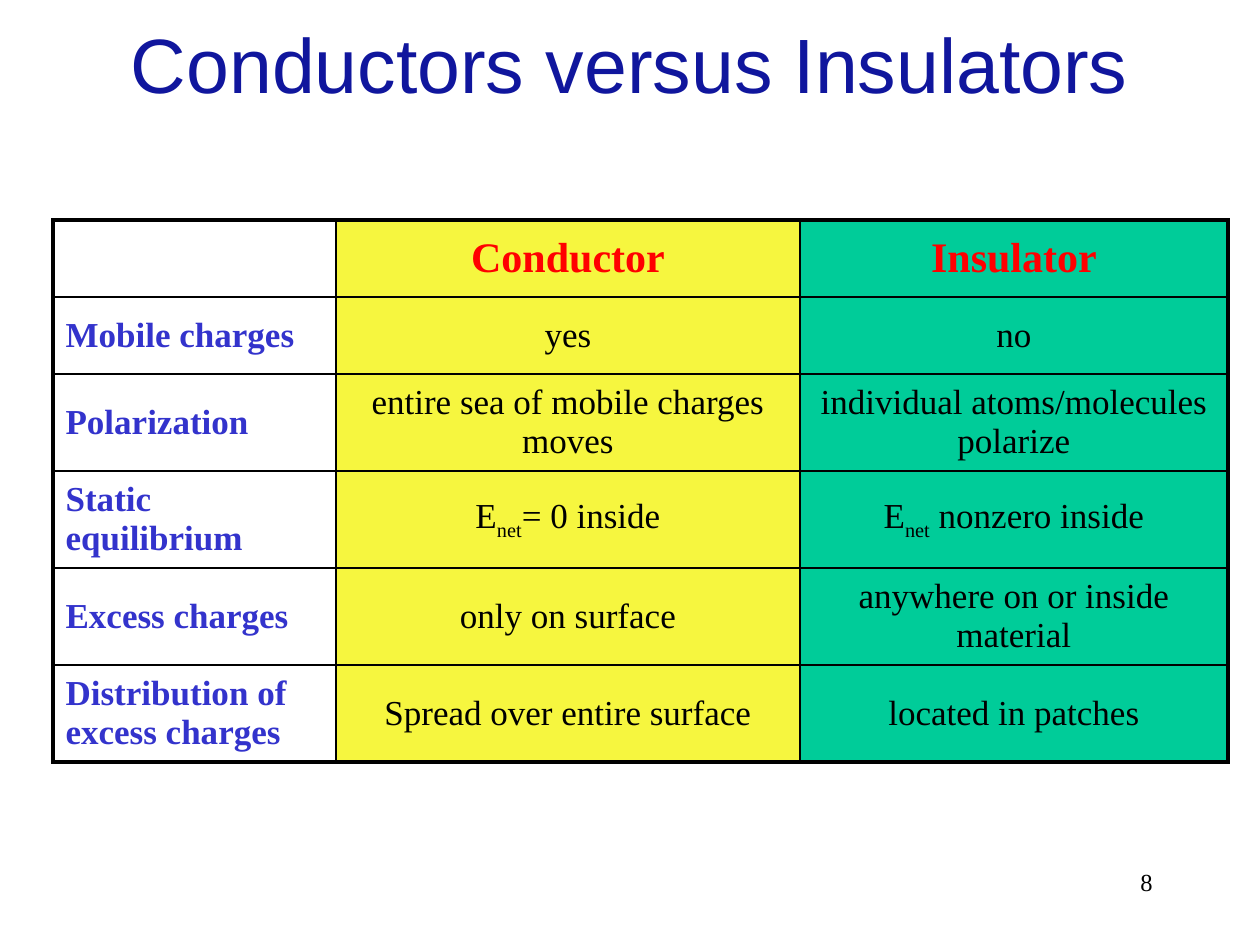
"""Build the slide comparing conductors and insulators in a bordered table."""
from lxml import etree
from pptx import Presentation, util as u
from pptx.dml.color import RGBColor
from pptx.enum import text
from pptx.oxml import ns

PX = 914400 / 126
SERIF = "Times New Roman"
OUTER, INNER = 2.25, 1


def style(paragraph, size, color, name=SERIF, bold=False, align=text.PP_ALIGN.CENTER):
    font = paragraph.font
    font.size, font.name, font.bold = u.Pt(size), name, bold
    font.color.rgb = RGBColor.from_string(color)
    paragraph.alignment = align


def add_label(left, top, width, height, words):
    frame = slide.shapes.add_textbox(*[int(n * PX) for n in (left, top, width, height)]).text_frame
    frame.word_wrap = True
    frame.text = words
    return frame


prs = Presentation()
prs.slide_width, prs.slide_height = int(1260 * PX), int(945 * PX)
slide = prs.slides.add_slide(prs.slide_layouts[6])

title = add_label(0, 0, 1260, 126, "Conductors versus Insulators")
title.vertical_anchor = text.MSO_ANCHOR.MIDDLE
style(title.paragraphs[0], 44, "10169D", "Arial")

comparison = [
    ["", "Conductor", "Insulator"],
    ["Mobile charges", "yes", "no"],
    ["Polarization", "entire sea of mobile charges moves", "individual atoms/molecules polarize"],
    ["Static equilibrium", ("E", "net", "= 0 inside"), ("E", "net", " nonzero inside")],
    ["Excess charges", "only on surface", "anywhere on or inside material"],
    ["Distribution of excess charges", "Spread over entire surface", "located in patches"],
]
column_widths = [283, 464, 428]
row_heights = [77] * 2 + [97] * 4
column_fills = [None, "F6F63F", "00CC99"]
last_row, last_col = len(row_heights) - 1, len(column_widths) - 1

bounds = [53, 220, sum(column_widths), sum(row_heights)]
table = slide.shapes.add_table(len(row_heights), len(column_widths), *[int(n * PX) for n in bounds]).table
table.first_row = table.horz_banding = False
for column, width in zip(table.columns, column_widths):
    column.width = int(width * PX)
for row, height in zip(table.rows, row_heights):
    row.height = int(height * PX)

for r, entries in enumerate(comparison):
    for c, entry in enumerate(entries):
        cell = table.cell(r, c)
        cell.vertical_anchor = text.MSO_ANCHOR.MIDDLE
        paragraph = cell.text_frame.paragraphs[0]
        if r == 0:
            style(paragraph, 24, "FF0000", bold=True)
        elif c == 0:
            style(paragraph, 20, "3333CC", bold=True, align=text.PP_ALIGN.LEFT)
        else:
            style(paragraph, 20, "000000")
        if isinstance(entry, tuple):
            for part in entry:
                run = paragraph.add_run()
                run.text = part
                if part == "net":
                    run.font._element.set("baseline", "-25000")
        elif entry:
            paragraph.add_run().text = entry

        edges = {"lnL": c == 0, "lnR": c == last_col, "lnT": r == 0, "lnB": r == last_row}
        cell_props = cell._tc.get_or_add_tcPr()
        for edge, is_outer in edges.items():
            width = u.Pt(OUTER if is_outer else INNER)
            border = etree.SubElement(cell_props, ns.qn(f"a:{edge}"), w=str(int(width)))
            paint = etree.SubElement(border, ns.qn("a:solidFill"))
            etree.SubElement(paint, ns.qn("a:srgbClr"), val="000000")
        if column_fills[c]:
            cell.fill.solid()
            cell.fill.fore_color.rgb = RGBColor.from_string(column_fills[c])
        else:
            cell.fill.background()

        for fill in cell_props.xpath("./a:solidFill | ./a:noFill"):
            cell_props.append(fill)

page_number = add_label(903, 861, 262, 63, "8")
style(page_number.paragraphs[0], 14, "000000", align=text.PP_ALIGN.RIGHT)

prs.save("out.pptx")
